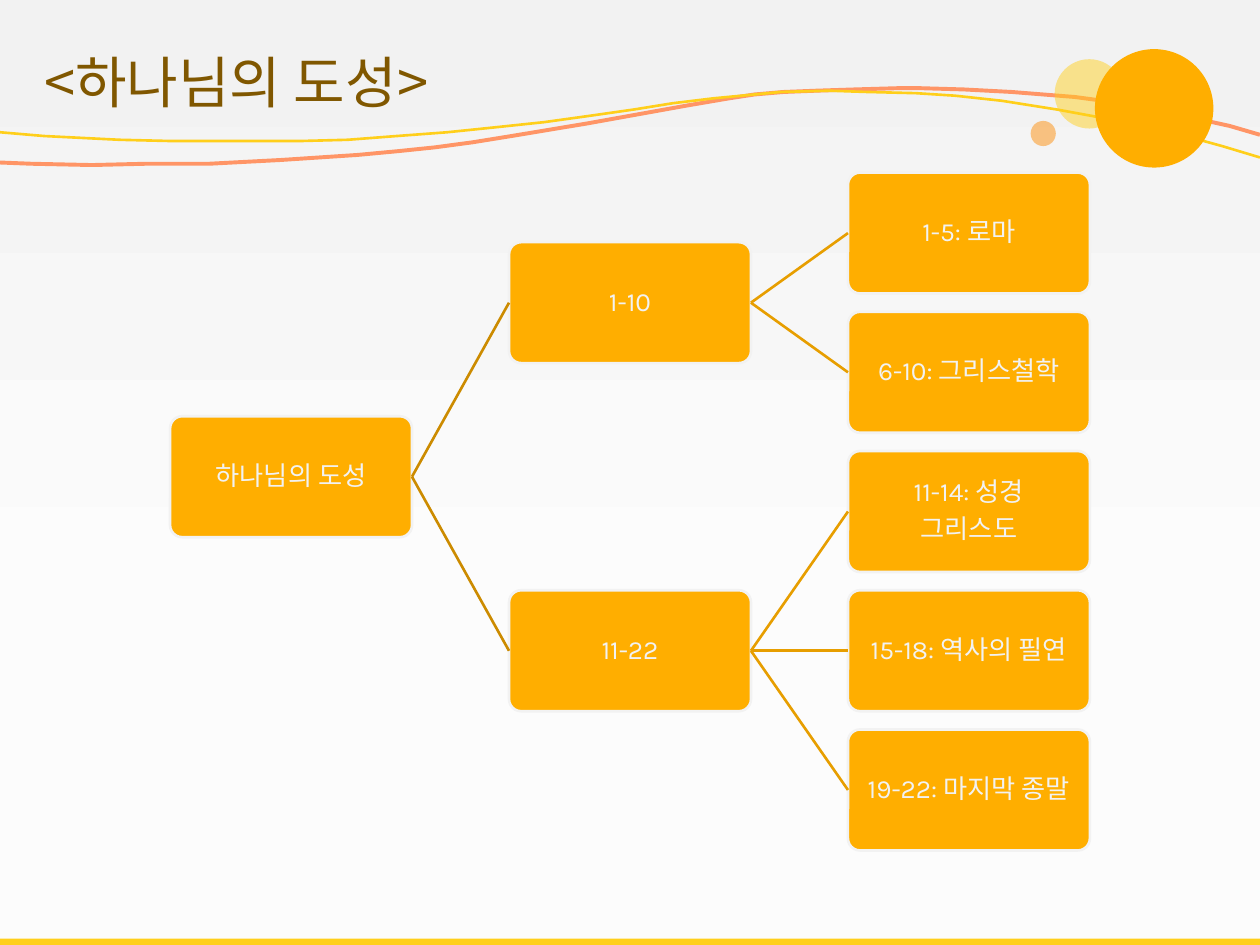
from lxml.etree import SubElement
from pptx import Presentation
from pptx.dml.color import RGBColor
from pptx.enum.shapes import MSO_CONNECTOR, MSO_SHAPE
from pptx.enum.text import MSO_ANCHOR, MSO_AUTO_SIZE, PP_ALIGN
from pptx.oxml.ns import qn
from pptx.util import Inches, Pt

WIDE, HIGH = 10, 7.5
LEFT, TOP = 1.35, 1.37
STEP, PITCH = 2.69, 1.105
BOX = (1.92, 0.96)
COLOR = {
    "top": "F2F2F2", "base": "FCFCFC", "gold": "FFAE00", "sun": "FFCF1B",
    "coral": "FF9566", "orange": "FD8A03", "title": "805700",
    "stem": "CC8B00", "twig": "E79E00", "pale": "F2F2F2",
}
TREE = ("하나님의 도성", [
    ("1-10", [("1-5: 로마", []), ("6-10: 그리스철학", [])]),
    ("11-22", [
        ("11-14: 성경\n그리스도", []),
        ("15-18: 역사의 필연", []),
        ("19-22: 마지막 종말", []),
    ]),
])
CORAL = [
    (0, 1.29), (0.25, 1.3), (0.73, 1.31), (1.16, 1.3), (1.66, 1.3), (2.23, 1.27),
    (2.84, 1.23), (3.16, 1.2), (3.45, 1.17), (3.75, 1.13), (4.06, 1.08),
    (4.66, 0.98), (5.44, 0.84), (5.79, 0.78), (5.99, 0.75), (6.22, 0.73),
    (6.48, 0.72), (6.78, 0.71), (7.12, 0.7), (7.31, 0.7), (7.65, 0.71),
    (8.03, 0.73), (8.53, 0.77), (8.83, 0.81), (9.11, 0.86), (9.36, 0.91),
    (9.58, 0.96), (9.76, 1), (10, 1.07),
]
YELLOW = [
    (0, 1.05), (0.35, 1.08), (0.95, 1.11), (1.36, 1.12), (1.84, 1.12),
    (2.38, 1.12), (2.76, 1.11), (3.15, 1.08), (3.55, 1.05), (3.94, 1.01),
    (4.32, 0.97), (4.68, 0.92), (5.03, 0.87), (5.34, 0.82), (5.67, 0.78),
    (5.99, 0.75), (6.2, 0.73), (6.58, 0.72), (6.87, 0.73), (7.27, 0.74),
    (7.58, 0.76), (7.95, 0.8), (8.39, 0.87), (8.88, 0.96), (9.14, 1.02),
    (9.41, 1.08), (9.7, 1.16), (10, 1.25),
]


def tint(name):
    return RGBColor.from_string(COLOR[name])


def stroke(line, name, width):
    line.color.rgb = tint(name)
    line.width = Pt(width)


def style(para, size, face, name, align):
    para.font.size = Pt(size)
    para.font.name = face
    para.font.color.rgb = tint(name)
    para.alignment = align


def paint(slide):
    fill = slide.background.fill
    fill.gradient()
    fill.gradient_angle = 270
    for stop, name, place in zip(fill.gradient_stops, ("top", "base"), (0, 0.67)):
        stop.color.rgb = tint(name)
        stop.position = place


def wave(slide, points, name, width):
    spots = [(Inches(x), Inches(y)) for x, y in points]
    pen = slide.shapes.build_freeform(*spots[0])
    pen.add_line_segments(spots[1:], close=False)
    curve = pen.convert_to_shape()
    curve.shadow.inherit = False
    curve.fill.background()
    stroke(curve.line, name, width)


def solid(slide, kind, place, name, alpha=None):
    shape = slide.shapes.add_shape(kind, *map(Inches, place))
    shape.shadow.inherit = False
    shape.fill.solid()
    shape.fill.fore_color.rgb = tint(name)
    shape.line.fill.background()
    if alpha:
        tone = shape.fill._xPr.find(".//" + qn("a:srgbClr"))
        SubElement(tone, qn("a:alpha"), val=str(alpha * 1000))
    return shape


def head(slide, text):
    title = slide.shapes.title
    title.left, title.top = Inches(0.25), Inches(0.19)
    title.width, title.height = Inches(9.49), Inches(0.91)
    frame = title.text_frame
    frame.text = text
    frame.auto_size = MSO_AUTO_SIZE.NONE
    frame.vertical_anchor = MSO_ANCHOR.MIDDLE
    style(frame.paragraphs[0], 32, "Noto Sans CJK KR", "title", PP_ALIGN.LEFT)


def card(slide, text, col, row):
    place = (LEFT + col * STEP, TOP + row * PITCH, *BOX)
    shape = solid(slide, MSO_SHAPE.ROUNDED_RECTANGLE, place, "gold")
    shape.adjustments[0] = 0.1
    stroke(shape.line, "pale", 1.5)
    frame = shape.text_frame
    frame.text = text
    frame.word_wrap = True
    frame.vertical_anchor = MSO_ANCHOR.MIDDLE
    frame.margin_left = frame.margin_right = Inches(0.04)
    frame.margin_top = frame.margin_bottom = Inches(0.04)
    for para in frame.paragraphs:
        style(para, 15, "Karla", "pale", PP_ALIGN.CENTER)
        para.line_spacing = 0.9
        para.space_after = Pt(5.25)
    return shape


def link(slide, start, end, name):
    line = slide.shapes.add_connector(MSO_CONNECTOR.STRAIGHT, 0, 0, 0, 0)
    line.begin_connect(start, 3)
    line.end_connect(end, 1)
    stroke(line.line, name, 1.5)
    SubElement(line._element.spPr, qn("a:effectLst"))


def count(node):
    return sum(map(count, node[1])) or 1


def level(node, first):
    rows = []
    for kid in node[1]:
        rows.append(level(kid, first))
        first += count(kid)
    return sum(rows) / len(rows) if rows else first


def grow(slide, node, col=0, first=0, stem=None):
    row = level(node, first)
    if stem:
        link(slide, stem, card_at := card(slide, node[0], col, row),
             "stem" if col == 1 else "twig")
    else:
        card_at = card(slide, node[0], col, row)
    for kid in node[1]:
        grow(slide, kid, col + 1, first, card_at)
        first += count(kid)


def main():
    deck = Presentation()
    deck.slide_width, deck.slide_height = Inches(WIDE), Inches(HIGH)
    slide = deck.slides.add_slide(deck.slide_layouts[5])
    paint(slide)
    wave(slide, CORAL, "coral", 2.25)
    wave(slide, YELLOW, "sun", 1.5)
    solid(slide, MSO_SHAPE.OVAL, (8.37, 0.47, 0.55, 0.55), "sun", 48)
    solid(slide, MSO_SHAPE.OVAL, (8.69, 0.39, 0.94, 0.94), "gold")
    solid(slide, MSO_SHAPE.OVAL, (8.18, 0.96, 0.2, 0.2), "orange", 48)
    solid(slide, MSO_SHAPE.RECTANGLE, (0, HIGH - 0.05, WIDE, 0.05), "sun")
    head(slide, "<하나님의 도성>")
    grow(slide, TREE)
    deck.save("out.pptx")


if __name__ == "__main__":
    main()
